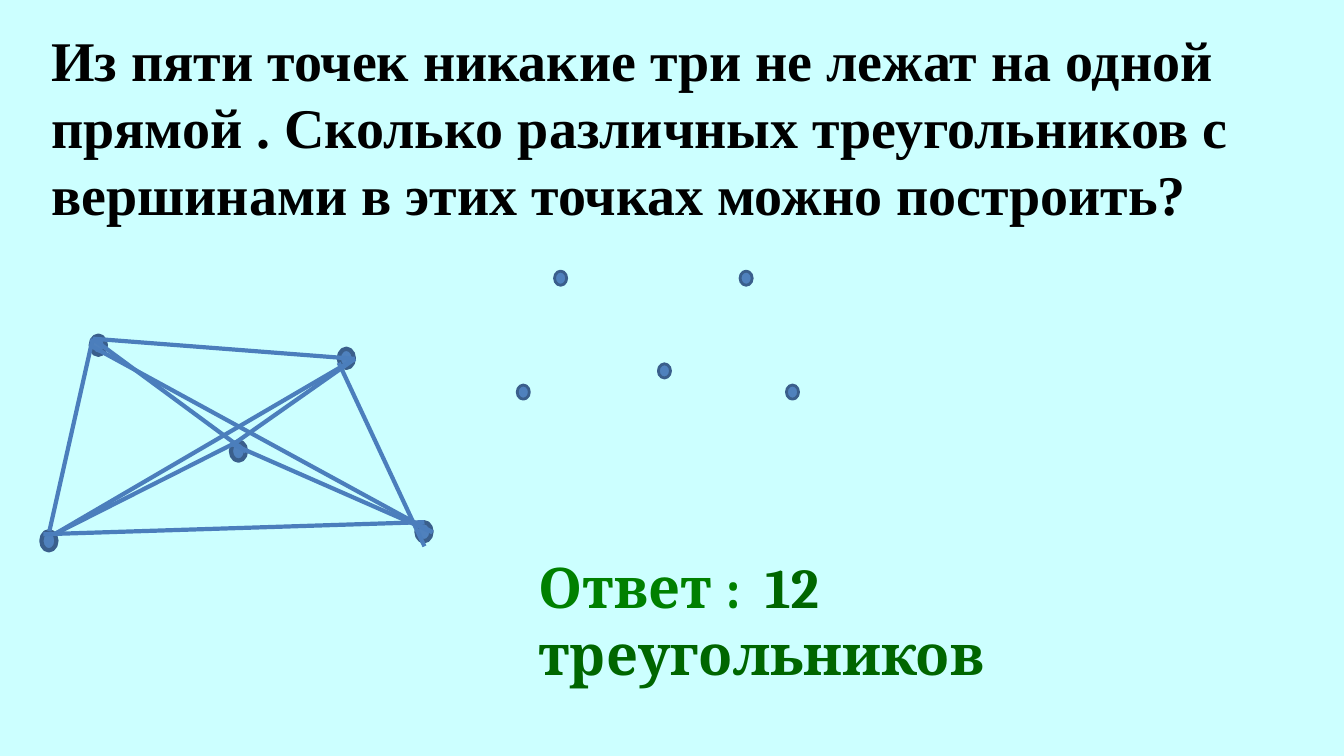
from dataclasses import dataclass
from typing import Any

from lxml.etree import SubElement
from pptx import Presentation
from pptx.dml.color import RGBColor
from pptx.enum.shapes import MSO_CONNECTOR as Connector, MSO_SHAPE as Preset
from pptx.enum.text import MSO_AUTO_SIZE as AutoSize
from pptx.oxml.ns import qn
from pptx.util import Inches, Pt

BACKGROUND = "CCFFFF"
POINT_FILL = "4F81BD"
POINT_EDGE = "3A5F8C"
SIDE_COLOR = "4B7EBC"


@dataclass(frozen=True)
class Phrase:
    wording: str
    font: str
    color: str


@dataclass(frozen=True)
class Passage:
    left: float
    top: float
    width: float
    height: float
    phrases: tuple[Phrase, ...]


@dataclass(frozen=True)
class PointSet:
    width: float
    height: float
    edge: float
    corners: tuple[tuple[float, float], ...]


@dataclass(frozen=True)
class Side:
    start: tuple[float, float]
    end: tuple[float, float]


QUESTION = Passage(0.41, 0.2, 13.17, 2.12, (
    Phrase("Из пяти точек никакие три не лежат на одной прямой . "
           "Сколько различных треугольников с вершинами в этих точках можно построить?",
           "Times New Roman", "000000"),
))
ANSWER = Passage(5.24, 5.43, 6.67, 1.45, (
    Phrase("Ответ : ", "Cambria", "008000"),
    Phrase(" 12 треугольников", "Cambria", "006600"),
))

FREE_POINTS = PointSet(0.12, 0.14, 2, (
    (5.5, 2.69), (7.8, 3.82), (5.13, 3.82), (7.34, 2.69), (6.53, 3.61),
))
JOINED_POINTS = PointSet(0.15, 0.19, 3, (
    (0.9, 3.33), (0.41, 5.27), (4.13, 5.18), (3.36, 3.46), (2.29, 4.38),
))

LOWER_LEFT = (0.54, 5.3)
UPPER_LEFT = (0.92, 3.36)
UPPER_RIGHT = (3.52, 3.56)
LOWER_RIGHT = (4.29, 5.28)
CENTER = (2.31, 4.41)
SIDES = (
    Side((0.49, 5.27), UPPER_LEFT),
    Side(UPPER_RIGHT, LOWER_LEFT),
    Side((2.36, 4.38), LOWER_LEFT),
    Side((4.21, 5.18), (0.43, 5.3)),
    Side(UPPER_LEFT, (2.44, 4.48)),
    Side(UPPER_RIGHT, UPPER_LEFT),
    Side(UPPER_RIGHT, CENTER),
    Side((3.36, 3.6), (4.21, 5.42)),
    Side(LOWER_RIGHT, CENTER),
    Side((0.9, 3.43), LOWER_RIGHT),
)


def rgb(color: str) -> RGBColor:
    return RGBColor.from_string(color)


def apply_format(target: Any, values: dict[str, Any]) -> None:
    for attribute, value in values.items():
        setattr(target, attribute, value)


def write_passage(slide: Any, passage: Passage) -> None:
    box = slide.shapes.add_textbox(Inches(passage.left), Inches(passage.top),
                                   Inches(passage.width), Inches(passage.height))
    frame = box.text_frame
    apply_format(frame, {"word_wrap": True, "auto_size": AutoSize.SHAPE_TO_FIT_TEXT})
    for phrase in passage.phrases:
        run = frame.paragraphs[0].add_run()
        run.text = phrase.wording
        apply_format(run.font, {"name": phrase.font, "size": Pt(40), "bold": True})
        run.font.color.rgb = rgb(phrase.color)


def draw_points(figure: Any, points: PointSet) -> None:
    for left, top in points.corners:
        dot = figure.shapes.add_shape(Preset.OVAL, Inches(left), Inches(top),
                                      Inches(points.width), Inches(points.height))
        dot.shadow.inherit = False
        dot.fill.solid()
        dot.fill.fore_color.rgb = rgb(POINT_FILL)
        dot.line.color.rgb = rgb(POINT_EDGE)
        dot.line.width = Pt(points.edge)


def draw_side(figure: Any, side: Side) -> None:
    ends = [Inches(value) for value in (*side.start, *side.end)]
    segment = figure.shapes.add_connector(Connector.STRAIGHT, *ends)
    segment.line.color.rgb = rgb(SIDE_COLOR)
    segment.line.width = Pt(3)
    SubElement(segment._element.spPr, qn("a:effectLst"))


def main() -> None:
    deck = Presentation()
    apply_format(deck, {"slide_width": Inches(13.33), "slide_height": Inches(7.5)})
    slide = deck.slides.add_slide(deck.slide_layouts[6])
    slide.background.fill.solid()
    slide.background.fill.fore_color.rgb = rgb(BACKGROUND)

    write_passage(slide, QUESTION)
    draw_points(slide.shapes.add_group_shape(), FREE_POINTS)
    triangles = slide.shapes.add_group_shape()
    draw_points(triangles, JOINED_POINTS)
    for side in SIDES:
        draw_side(triangles, side)
    write_passage(slide, ANSWER)
    deck.save("out.pptx")


if __name__ == "__main__":
    main()
